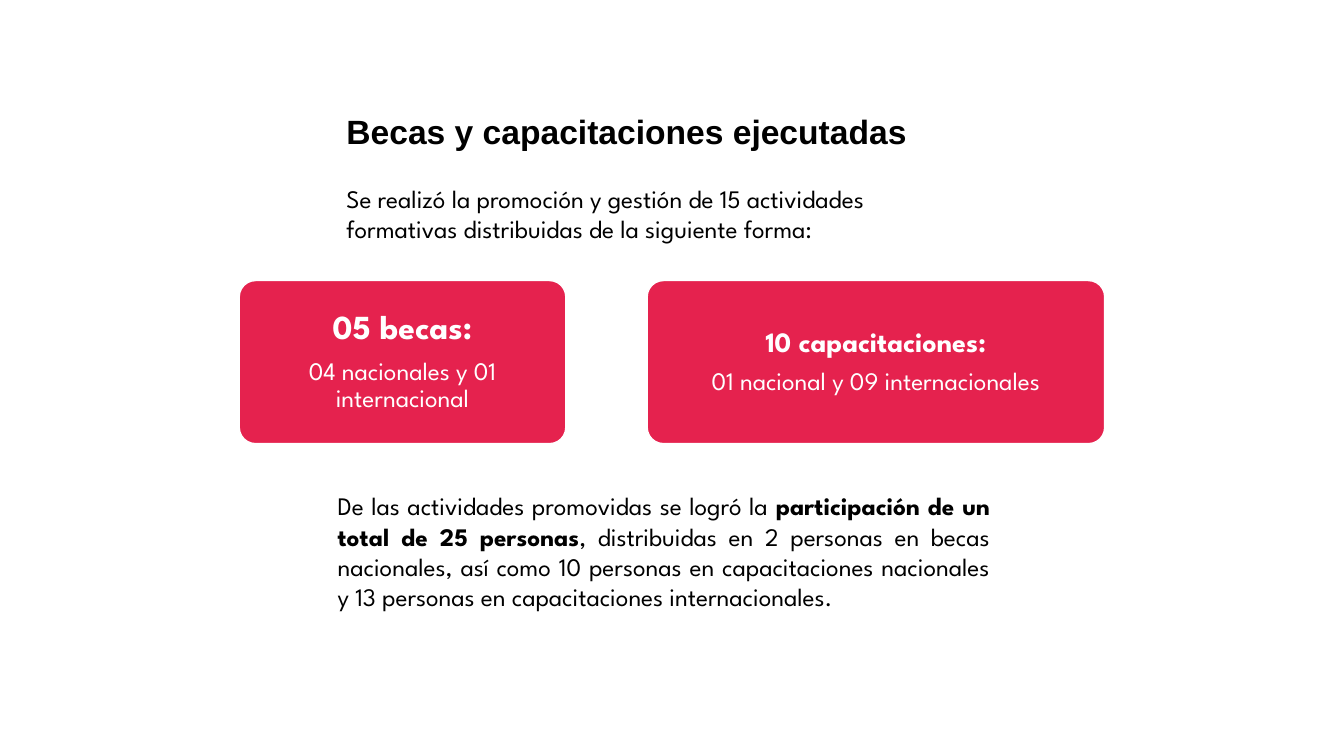
from pptx import Presentation
from pptx.dml.color import RGBColor
from pptx.enum.shapes import MSO_SHAPE
from pptx.enum.text import MSO_ANCHOR, PP_ALIGN
from pptx.util import Cm, Pt

BODY_FONT = "League Spartan"
BLACK, WHITE, CRIMSON = "000000", "FFFFFF", "E5224E"


def color(value):
    """Turn a hex string into a colour."""
    return RGBColor.from_string(value)


def add_text(para, text, size=18, font=BODY_FONT, ink=BLACK, bold=False):
    """Add one formatted span of text to a paragraph."""
    span = para.add_run()
    span.text = text
    span.font.size = Pt(size)
    span.font.name = font
    span.font.bold = bold
    span.font.color.rgb = color(ink)


def add_frame(page, left, top, width, height):
    """Add a wrapping text box and return its text frame."""
    box = page.shapes.add_textbox(Cm(left), Cm(top), Cm(width), Cm(height))
    box.text_frame.word_wrap = True
    return box.text_frame


def add_title(page, left, top, width, height):
    """Place the slide title."""
    para = add_frame(page, left, top, width, height).paragraphs[0]
    para.line_spacing = 0.9
    add_text(para, "Becas y capacitaciones ejecutadas", size=24, font="Arial", bold=True)


def add_intro(page, left, top, width, height):
    """Place the two introductory lines."""
    frame = add_frame(page, left, top, width, height)
    add_text(frame.paragraphs[0], "Se realizó la promoción y gestión de 15 actividades")
    add_text(frame.add_paragraph(), "formativas distribuidas de la siguiente forma:")


def add_card(page, left, top, width, height, heading, heading_size, detail):
    """Place a rounded card with a heading and a detail line."""
    card = page.shapes.add_shape(
        MSO_SHAPE.ROUNDED_RECTANGLE, Cm(left), Cm(top), Cm(width), Cm(height)
    )
    card.adjustments[0] = 0.1
    card.shadow.inherit = False
    card.fill.solid()
    card.fill.fore_color.rgb = color(CRIMSON)
    card.line.color.rgb = color(WHITE)
    card.line.width = Pt(1)
    frame = card.text_frame
    frame.word_wrap = True
    frame.vertical_anchor = MSO_ANCHOR.MIDDLE
    frame.margin_left = frame.margin_right = Cm(0.13)
    frame.margin_top = frame.margin_bottom = Cm(0.08)
    lines = [(heading, heading_size, True), (detail, 18, False)]
    for para, (text, size, bold) in zip([frame.paragraphs[0], frame.add_paragraph()], lines):
        para.alignment = PP_ALIGN.CENTER
        para.line_spacing = 0.9
        para.space_after = Pt(round(size * 0.35, 1))
        add_text(para, text, size=size, ink=WHITE, bold=bold)


def add_summary(page, left, top, width, height):
    """Place the justified closing paragraph."""
    para = add_frame(page, left, top, width, height).paragraphs[0]
    para.alignment = PP_ALIGN.JUSTIFY
    add_text(para, "De las actividades promovidas se logró la ")
    add_text(para, "participación de un total de 25 personas", bold=True)
    add_text(
        para,
        ", distribuidas en 2 personas en becas nacionales, así como 10 personas "
        "en capacitaciones nacionales y 13 personas en capacitaciones internacionales.",
    )


def main():
    """Build and save the slide."""
    deck = Presentation()
    deck.slide_width, deck.slide_height = Cm(33.87), Cm(19.05)
    page = deck.slides.add_slide(deck.slide_layouts[6])
    add_intro(page, 8.48, 4.5, 16.51, 2.57)
    add_card(page, 6.03, 7.07, 8.23, 4.11,
             "05 becas:", 24, "04 nacionales y 01 internacional")
    add_card(page, 16.31, 7.07, 11.53, 4.11,
             "10 capacitaciones:", 20, "01 nacional y 09 internacionales")
    add_summary(page, 8.26, 12.24, 16.94, 4.62)
    add_title(page, 8.48, 2.79, 16.92, 1.7)
    deck.save("out.pptx")


if __name__ == "__main__":
    main()
